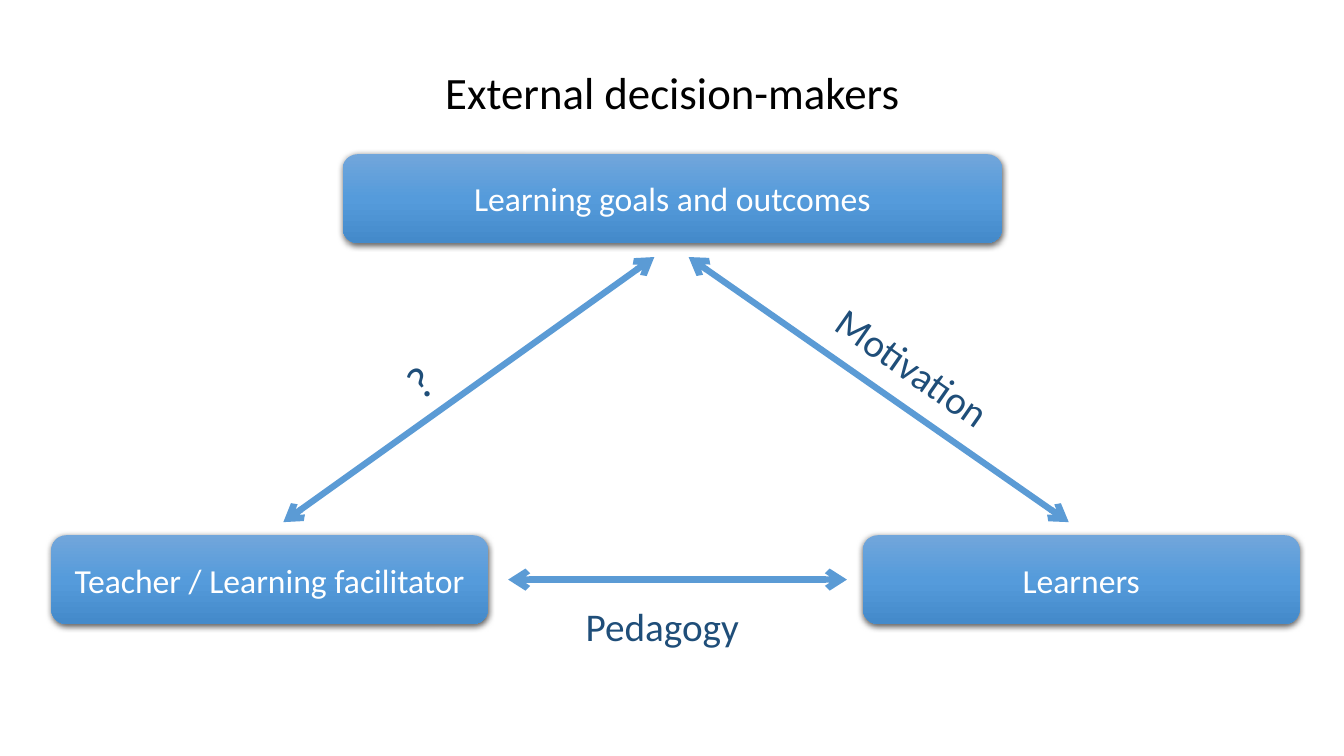
from dataclasses import dataclass

from lxml.etree import SubElement
from pptx import Presentation
from pptx.dml.color import RGBColor
from pptx.enum.shapes import MSO_CONNECTOR, MSO_SHAPE
from pptx.enum.text import MSO_ANCHOR, MSO_AUTO_SIZE, PP_ALIGN
from pptx.oxml.ns import qn
from pptx.slide import Slide
from pptx.text.text import TextFrame
from pptx.util import Inches, Pt

BLACK = RGBColor(0x00, 0x00, 0x00)
WHITE = RGBColor(0xFF, 0xFF, 0xFF)
NAVY = RGBColor(0x1F, 0x4E, 0x79)
ARROW_BLUE = RGBColor(0x5B, 0x9B, 0xD5)
ROLE_GRADIENT = {
    0: RGBColor(0x71, 0xA6, 0xDB),
    50: RGBColor(0x55, 0x9B, 0xDB),
    100: RGBColor(0x44, 0x8A, 0xCA),
}
FONT = "Calibri"
ROLE_HEIGHT = 0.88


@dataclass
class Role:
    text: str
    left: float
    top: float
    width: float


@dataclass
class Relation:
    start: tuple[float, float]
    end: tuple[float, float]


@dataclass
class Label:
    text: str
    left: float
    top: float
    width: float
    height: float
    size: int = 28
    rotation: float = 0
    wrap: bool = False


ROLES = [
    Role("Learning goals and outcomes", 3.4, 1.53, 6.54),
    Role("Teacher / Learning facilitator", 0.51, 5.31, 4.33),
    Role("Learners", 8.56, 5.31, 4.33),
]
RELATIONS = [
    Relation((5.04, 5.75), (8.4, 5.75)),
    Relation((6.49, 2.55), (2.81, 5.18)),
    Relation((6.83, 2.55), (10.6, 5.18)),
]
LABELS = [
    Label("Pedagogy", 5.71, 5.93, 2.02, 0.57),
    Label("Motivation", 8.06, 3.45, 2.25, 0.57, rotation=34.9),
    Label("?", 3.94, 3.41, 0.58, 0.64, size=32, rotation=324.1, wrap=True),
]


def write(frame: TextFrame, text: str, size: int, color: RGBColor, align: PP_ALIGN) -> None:
    frame.text = text
    paragraph = frame.paragraphs[0]
    paragraph.alignment = align
    font = paragraph.runs[0].font
    font.name = FONT
    font.size = Pt(size)
    font.color.rgb = color


def add_heading(slide: Slide, text: str) -> None:
    heading = slide.shapes.title
    heading.left, heading.top = Inches(3.18), Inches(0.59)
    heading.width, heading.height = Inches(6.98), Inches(0.64)
    write(heading.text_frame, text, 32, BLACK, PP_ALIGN.CENTER)
    heading.text_frame.word_wrap = True
    heading.text_frame.vertical_anchor = MSO_ANCHOR.TOP
    heading.text_frame.auto_size = MSO_AUTO_SIZE.SHAPE_TO_FIT_TEXT


def add_role(slide: Slide, role: Role) -> None:
    box = slide.shapes.add_shape(
        MSO_SHAPE.ROUNDED_RECTANGLE,
        Inches(role.left), Inches(role.top), Inches(role.width), Inches(ROLE_HEIGHT),
    )
    box.line.fill.background()
    box.fill.gradient()
    box.fill.gradient_angle = 270
    properties = box._element.spPr
    stops = properties.find(qn("a:gradFill")).find(qn("a:gsLst"))
    stops.clear()
    for percent, color in ROLE_GRADIENT.items():
        stop = SubElement(stops, qn("a:gs"), pos=str(percent * 1000))
        SubElement(stop, qn("a:srgbClr"), val=str(color))

    box.shadow.inherit = False
    shadow = SubElement(
        properties.find(qn("a:effectLst")), qn("a:outerShdw"),
        blurRad=str(Pt(4.5)), dist=str(Pt(1.5)), dir="5400000", algn="ctr", rotWithShape="0",
    )
    shade = SubElement(shadow, qn("a:srgbClr"), val=str(BLACK))
    SubElement(shade, qn("a:alpha"), val="63000")

    write(box.text_frame, role.text, 24, WHITE, PP_ALIGN.CENTER)
    box.text_frame.vertical_anchor = MSO_ANCHOR.MIDDLE


def add_relation(slide: Slide, relation: Relation) -> None:
    ends = [Inches(value) for value in (*relation.start, *relation.end)]
    arrow = slide.shapes.add_connector(MSO_CONNECTOR.STRAIGHT, *ends)
    arrow.line.width = Pt(4.5)
    arrow.line.color.rgb = ARROW_BLUE
    properties = arrow._element.spPr
    for tag in ("a:headEnd", "a:tailEnd"):
        SubElement(properties.find(qn("a:ln")), qn(tag), type="arrow")
    SubElement(properties, qn("a:effectLst"))


def add_label(slide: Slide, label: Label) -> None:
    box = slide.shapes.add_textbox(
        Inches(label.left), Inches(label.top), Inches(label.width), Inches(label.height)
    )
    box.rotation = label.rotation
    write(box.text_frame, label.text, label.size, NAVY, PP_ALIGN.LEFT)
    box.text_frame.word_wrap = label.wrap
    box.text_frame.auto_size = MSO_AUTO_SIZE.SHAPE_TO_FIT_TEXT


def main() -> None:
    deck = Presentation()
    deck.slide_width, deck.slide_height = Inches(13.33), Inches(7.5)
    slide = deck.slides.add_slide(deck.slide_layouts[5])
    add_heading(slide, "External decision-makers")
    for role in ROLES:
        add_role(slide, role)
    for relation in RELATIONS:
        add_relation(slide, relation)
    for label in LABELS:
        add_label(slide, label)
    deck.save("out.pptx")


if __name__ == "__main__":
    main()
